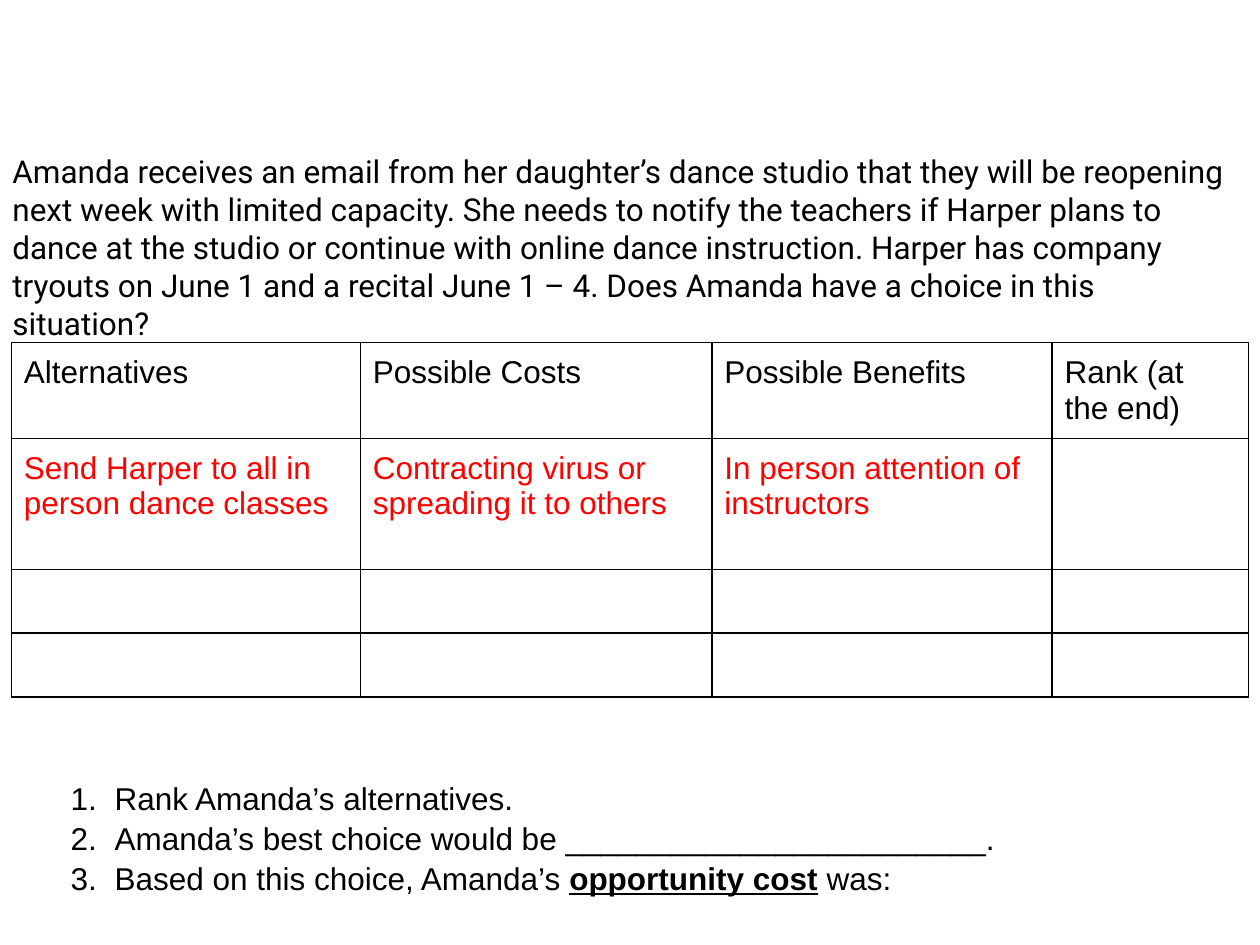
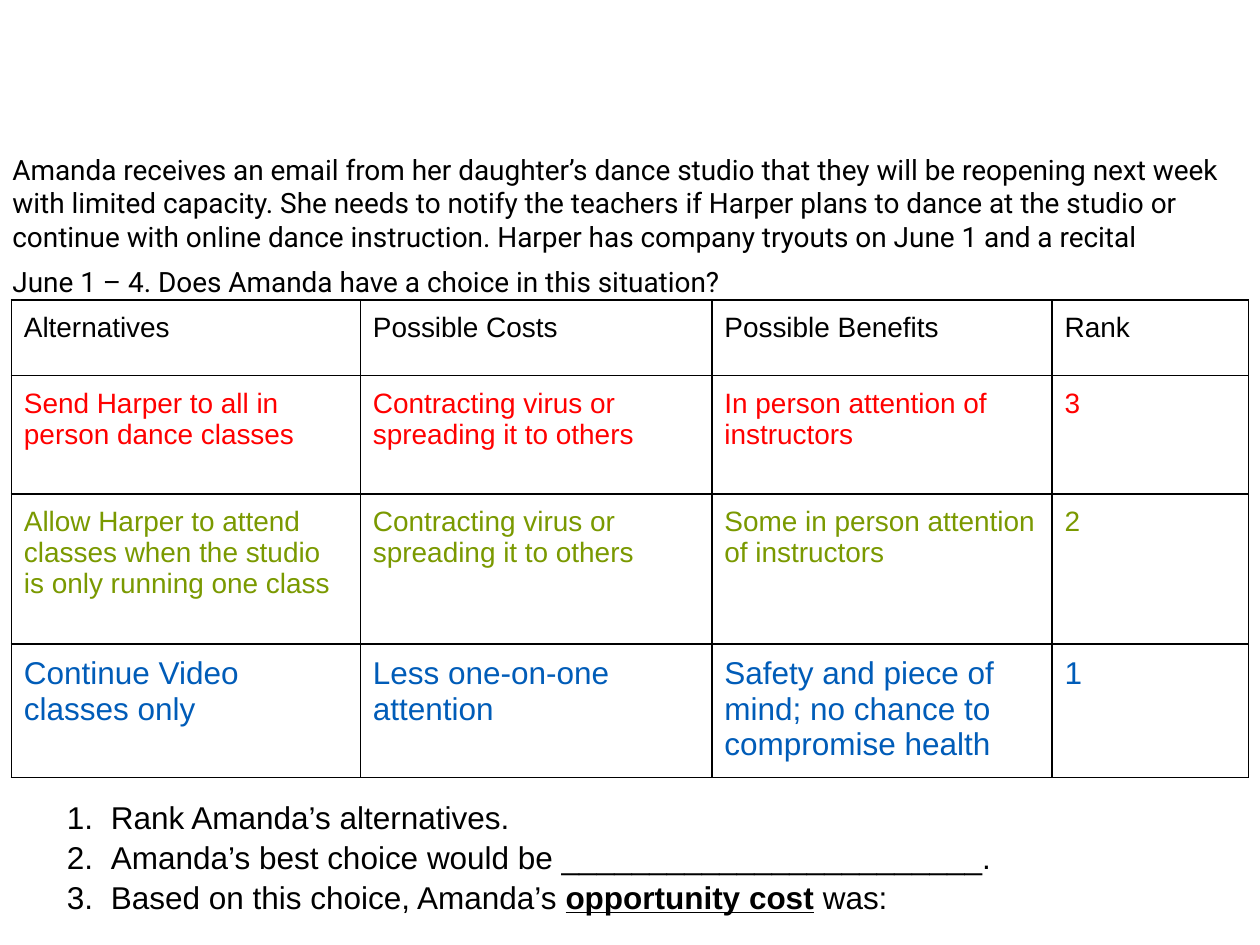
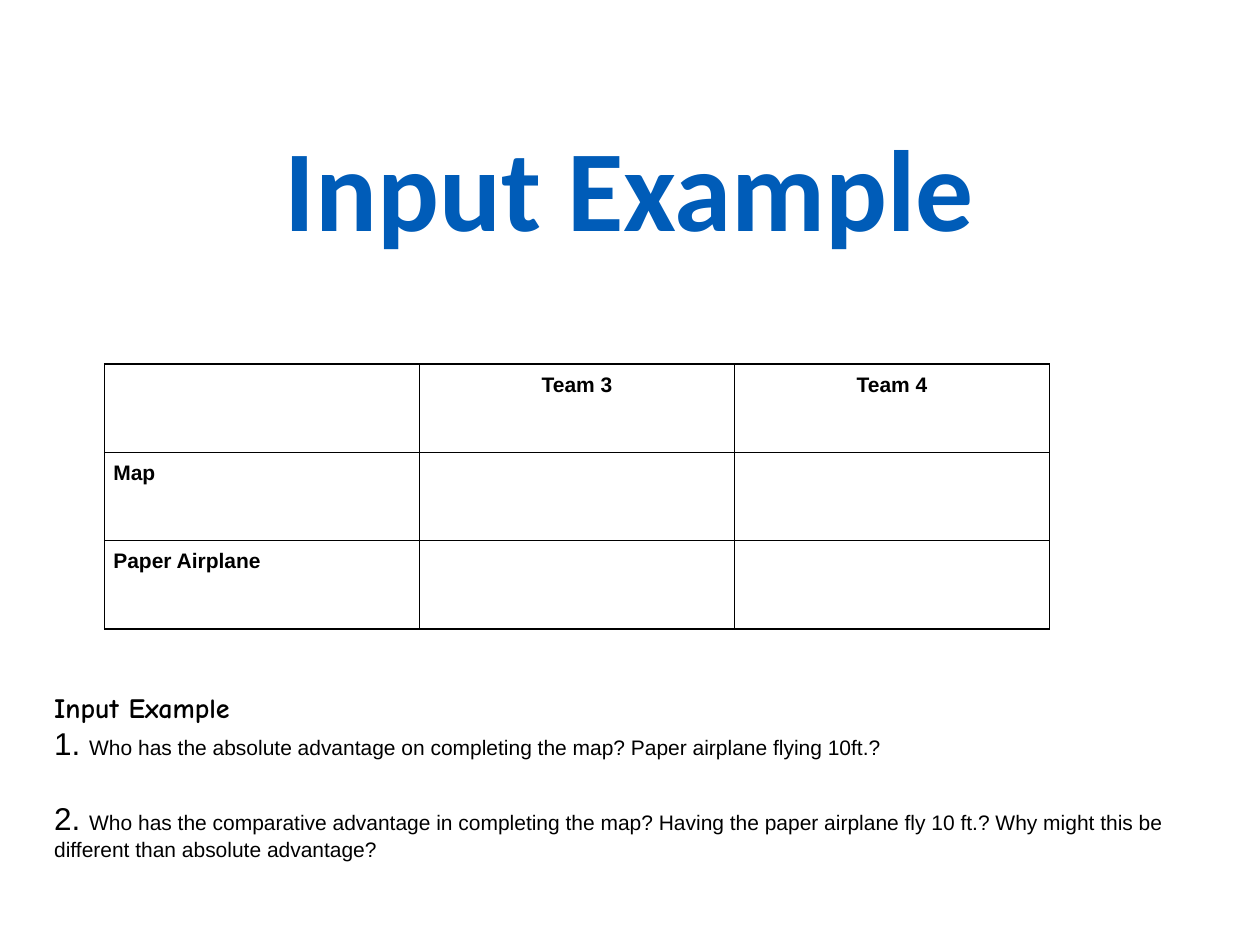
"""Build three economics slides on choices, opportunity cost and advantage."""
from lxml import etree
from pptx import Presentation
from pptx.dml.color import RGBColor
from pptx.enum.text import MSO_ANCHOR, MSO_AUTO_SIZE, PP_ALIGN
from pptx.oxml.ns import qn
from pptx.util import Inches, Pt

BLACK = RGBColor(0x00, 0x00, 0x00)
RED = RGBColor(0xFF, 0x00, 0x00)
GREEN = RGBColor(0x7A, 0x99, 0x00)
BLUE = RGBColor(0x00, 0x5C, 0xB8)
LEFT, CENTER = PP_ALIGN.LEFT, PP_ALIGN.CENTER
TOP, MIDDLE = MSO_ANCHOR.TOP, MSO_ANCHOR.MIDDLE
NO_AUTOFIT = MSO_AUTO_SIZE.NONE

STORY = (
    "Amanda receives an email from her daughter’s dance studio that they will be reopening "
    "next week with limited capacity. She needs to notify the teachers if Harper plans to "
    "dance at the studio or continue with online dance instruction. Harper has company "
    "tryouts on June 1 and a recital"
)
STORY_END = "June 1 – 4. Does Amanda have a choice in this situation?"
HEADINGS = ["Alternatives", "Possible Costs", "Possible Benefits"]
IN_PERSON = [
    "Send Harper to all in person dance classes",
    "Contracting virus or spreading it to others",
    "In person attention of instructors",
]
SOME_CLASSES = [
    "Allow Harper to attend classes when the studio is only running one class",
    "Contracting virus or spreading it to others",
    "Some in person attention of instructors",
]
ONLINE = [
    "Continue Video classes only",
    "Less one-on-one attention",
    "Safety and piece of mind; no chance to compromise health",
]
TASKS = [
    [("Rank Amanda’s alternatives.", {})],
    [("Amanda’s best choice would be ________________________.", {})],
    [
        ("Based on this choice, Amanda’s ", {}),
        ("opportunity cost", {"bold": True, "underline": True}),
        (" was:", {}),
    ],
]
CHOICE_COLUMNS = [2.77, 2.79, 2.7, 1.56]
CHOICE_SLIDES = [
    {
        "story": [f"{STORY} {STORY_END}"],
        "story_size": 18,
        "story_height": 1.62,
        "table_top": 2.72,
        "row_heights": [0.76, 1.04, 0.5, 0.5],
        "rows": [
            (HEADINGS + ["Rank (at the end)"], 18, BLACK),
            (IN_PERSON + [""], 18, RED),
            ([""] * 4, 18, BLACK),
            ([""] * 4, 18, BLACK),
        ],
        "tasks_at": (0.31, 6.12),
    },
    {
        "story": [STORY, STORY_END],
        "story_size": 16,
        "story_height": 1.26,
        "table_top": 2.38,
        "row_heights": [0.6, 0.94, 1.19, 1.06],
        "rows": [
            (HEADINGS + ["Rank"], 16, BLACK),
            (IN_PERSON + ["3"], 16, RED),
            (SOME_CLASSES + ["2"], 16, GREEN),
            (ONLINE + ["1"], 18, BLUE),
        ],
        "tasks_at": (0.28, 6.27),
    },
]
TEAM_ROWS = [
    (["", "Team 3", "Team 4"], 12, BLACK),
    (["Map", "", ""], 12, BLACK),
    (["Paper Airplane", "", ""], 12, BLACK),
]
QUESTIONS = [
    "Who has the absolute advantage on completing the map? Paper airplane flying 10ft.?",
    "Who has the comparative advantage in completing the map? Having the paper airplane "
    "fly 10 ft.? Why might this be different than absolute advantage?",
]


def write_paragraph(frame, text, size=18, font="Arial", color=BLACK, bold=False, align=LEFT,
                    before=0, spacing=1.0, numbered=False):
    """Add a paragraph of plain text or of (text, format) runs to a text frame."""
    paragraph = frame.paragraphs[0]
    if paragraph.runs:
        paragraph = frame.add_paragraph()
    paragraph.alignment = align
    paragraph.space_before = Pt(before)
    paragraph.line_spacing = spacing
    properties = paragraph._p.get_or_add_pPr()
    properties.set("marL", str(Inches(0.5 if numbered else 0)))
    properties.set("indent", str(Inches(-0.35 if numbered else 0)))
    if numbered:
        etree.SubElement(properties, qn("a:buAutoNum"), type="arabicPeriod")
    else:
        etree.SubElement(properties, qn("a:buNone"))
    runs = [(text, {})] if isinstance(text, str) else text
    for words, changes in runs:
        run = paragraph.add_run()
        run.text = words
        run.font.name = font
        run.font.size = Pt(changes.get("size", size))
        run.font.bold = changes.get("bold", bold)
        run.font.underline = changes.get("underline", False)
        run.font.color.rgb = color


def place(shape, left, top, width, height, anchor=TOP):
    """Position a text shape and fix its wrapping and anchor."""
    shape.left, shape.top = Inches(left), Inches(top)
    shape.width, shape.height = Inches(width), Inches(height)
    frame = shape.text_frame
    frame.word_wrap = True
    frame.auto_size = NO_AUTOFIT
    frame.vertical_anchor = anchor
    return frame


def outline_cell(cell):
    """Draw thin black borders on all four sides of an unfilled cell."""
    properties = cell._tc.get_or_add_tcPr()
    for side in ("lnL", "lnR", "lnT", "lnB"):
        line = etree.SubElement(properties, qn(f"a:{side}"), w=str(Pt(1)))
        fill = etree.SubElement(line, qn("a:solidFill"))
        etree.SubElement(fill, qn("a:srgbClr"), val=str(BLACK))
    cell.fill.background()


def add_grid(slide, left, top, columns, heights, rows, margin=0.1, bold=False,
             heading_align=LEFT):
    """Add an outlined table whose rows hold texts, a size and a colour."""
    table = slide.shapes.add_table(
        len(rows), len(columns), Inches(left), Inches(top),
        Inches(sum(columns)), Inches(sum(heights))).table
    table.first_row = table.horz_banding = False
    for column, width in zip(table.columns, columns):
        column.width = Inches(width)
    for row_index, (texts, size, color) in enumerate(rows):
        table.rows[row_index].height = Inches(heights[row_index])
        for column_index, text in enumerate(texts):
            cell = table.cell(row_index, column_index)
            cell.margin_left = cell.margin_right = Inches(margin)
            cell.margin_top = cell.margin_bottom = Inches(margin)
            outline_cell(cell)
            if text:
                write_paragraph(cell.text_frame, text, size=size, color=color, bold=bold,
                                align=LEFT if row_index else heading_align)


def add_choice_slide(presentation, content):
    """Add a slide with Amanda's story, her alternatives and the tasks."""
    slide = presentation.slides.add_slide(presentation.slide_layouts[1])
    title = slide.shapes.title
    title.element.getparent().remove(title.element)
    add_grid(slide, 0.09, content["table_top"], CHOICE_COLUMNS, content["row_heights"],
             content["rows"])
    story = place(slide.shapes.add_textbox(0, 0, 0, 0), 0, 1.16, 9.91, content["story_height"])
    for index, text in enumerate(content["story"]):
        write_paragraph(story, text, size=content["story_size"], font="Roboto",
                        before=6.4 if index else 0)
    tasks = place(slide.placeholders[1], *content["tasks_at"], 9.07, 1.01)
    for task in TASKS:
        write_paragraph(tasks, task, spacing=1.05, numbered=True)


def add_input_slide(presentation):
    """Add the slide that compares two teams and asks about advantage."""
    slide = presentation.slides.add_slide(presentation.slide_layouts[1])
    title = place(slide.shapes.title, 0.5, 1, 9, 1.25, anchor=MIDDLE)
    write_paragraph(title, "Input Example", size=66, font="Calibri", color=BLUE, bold=True,
                    align=CENTER, spacing=Pt(57))
    add_grid(slide, 0.83, 2.89, [2.5] * 3, [0.7] * 3, TEAM_ROWS, margin=0.07, bold=True,
             heading_align=CENTER)
    questions = place(slide.placeholders[1], 0.33, 5.48, 9.34, 1.68)
    questions.margin_top = questions.margin_bottom = 0
    write_paragraph(questions, "Input Example", size=16, font="Comic Neue", bold=True)
    for number, question in enumerate(QUESTIONS, 1):
        write_paragraph(questions, [(f"{number}. ", {"size": 18}), (question, {})], size=12,
                        before=21 if number > 1 else 0)


def main():
    """Build and save the presentation."""
    presentation = Presentation()
    presentation.slide_width, presentation.slide_height = Inches(10), Inches(7.5)
    for content in CHOICE_SLIDES:
        add_choice_slide(presentation, content)
    add_input_slide(presentation)
    presentation.save("out.pptx")


if __name__ == "__main__":
    main()
